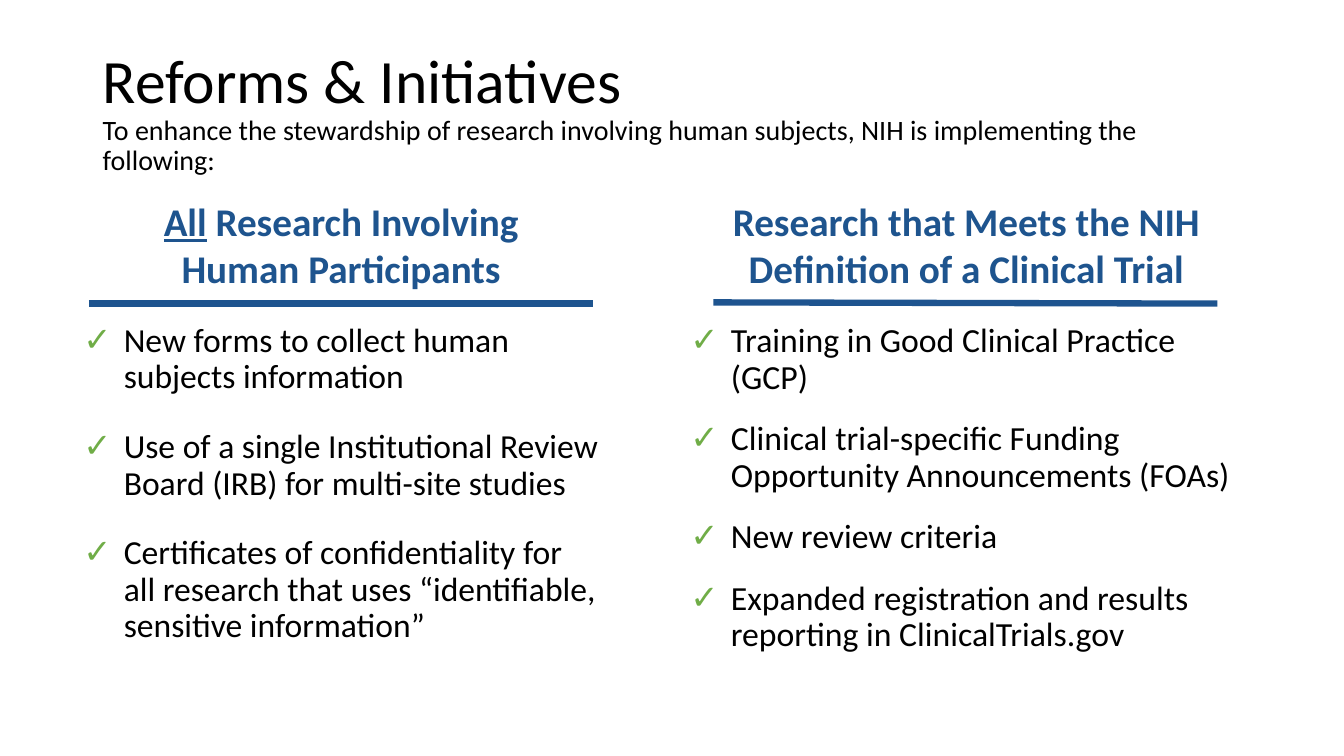
from pptx import Presentation
from pptx.dml.color import RGBColor
from pptx.enum.shapes import MSO_CONNECTOR as Connector
from pptx.enum.text import MSO_ANCHOR as Anchor, PP_ALIGN as Align
from pptx.oxml.ns import qn
from pptx.util import Cm, Pt
from lxml.etree import SubElement

COLORS = {"text": "000000", "heading": "1E548E", "rule": "1E548F", "check": "70AD47"}
FONT = "Calibri"


def format_run(run, size, color, bold=False):
    run.font.name = FONT
    run.font.size = Pt(size)
    run.font.bold = bold
    run.font.color.rgb = RGBColor.from_string(COLORS[color])


def add_text_frame(slide, left, top, width, height):
    shape = slide.shapes.add_textbox(Cm(left), Cm(top), Cm(width), Cm(height))
    shape.text_frame.word_wrap = True
    return shape.text_frame


def add_check_bullet(paragraph):
    properties = paragraph._p.get_or_add_pPr()
    properties.set("marL", str(Cm(1.02)))
    properties.set("indent", str(-Cm(1.02)))
    color = SubElement(properties, qn("a:buClr"))
    SubElement(color, qn("a:srgbClr"), val=COLORS["check"])
    SubElement(properties, qn("a:buFont"), typeface=FONT)
    SubElement(properties, qn("a:buChar"), char="✓")


def add_title(slide, box):
    text_frame = add_text_frame(slide, *box)
    text_frame.vertical_anchor = Anchor.MIDDLE
    paragraph = text_frame.paragraphs[0]
    paragraph.text = (
        "Reforms & Initiatives \v"
        "To enhance the stewardship of research involving human subjects, "
        "NIH is implementing the following:"
    )
    paragraph.line_spacing = 0.9
    for run, size in zip(paragraph.runs, (44, 20)):
        format_run(run, size, "text")


def add_heading(slide, box, parts):
    paragraph = add_text_frame(slide, *box).paragraphs[0]
    paragraph.alignment = Align.CENTER
    for words, underlined in parts:
        run = paragraph.add_run()
        run.text = words
        format_run(run, 28, "heading", bold=True)
        run.font.underline = underlined


def add_rule(slide, left, top, width, drop):
    rule = slide.shapes.add_connector(
        Connector.STRAIGHT, Cm(left), Cm(top), Cm(left + width), Cm(top + drop)
    )
    rule.line.color.rgb = RGBColor.from_string(COLORS["rule"])
    rule.line.width = Pt(4.5)
    SubElement(rule._element.spPr, qn("a:effectLst"))


def add_checklist(slide, box, items, size, before, after):
    text_frame = add_text_frame(slide, *box)
    text_frame.text = "\n".join(items)
    for index, paragraph in enumerate(text_frame.paragraphs):
        paragraph.line_spacing = 0.9
        paragraph.space_before = Pt(before if index else 0)
        paragraph.space_after = Pt(after)
        add_check_bullet(paragraph)
        format_run(paragraph.runs[0], size, "text")


def add_column(slide, box, heading, items, rule_inset, rule_drop, size, before, after):
    left, top, width, height = box
    add_heading(slide, (left + 0.94, top, width - 1.88, 2.64), heading)
    add_rule(slide, left + rule_inset, top + 2.8 - rule_drop, 12.7, rule_drop)
    add_checklist(
        slide, (left, top + 3.18, width, height - 3.18), items, size, before, after
    )


def main():
    presentation = Presentation()
    presentation.slide_width = Cm(33.87)
    presentation.slide_height = Cm(19.05)
    slide = presentation.slides.add_slide(presentation.slide_layouts[6])

    add_title(slide, (2.34, 1.02, 29.21, 3.68))
    add_column(
        slide,
        (1.85, 4.85, 13.49, 12.17),
        [("All", True), (" Research Involving Human Participants", False)],
        [
            "New forms to collect human subjects information",
            "Use of a single Institutional Review Board (IRB) for multi-site studies",
            "Certificates of confidentiality for all research that uses "
            "“identifiable, sensitive information”",
        ],
        rule_inset=0.39, rule_drop=0, size=24, before=24, after=0,
    )
    add_column(
        slide,
        (17.15, 4.85, 14.4, 12.17),
        [("Research that Meets the NIH Definition of a Clinical Trial", False)],
        [
            "Training in Good Clinical Practice (GCP)",
            "Clinical trial-specific Funding Opportunity Announcements (FOAs)",
            "New review criteria",
            "Expanded registration and results reporting in ClinicalTrials.gov",
        ],
        rule_inset=0.83, rule_drop=0.03, size=24.1, before=6, after=12,
    )
    presentation.save("out.pptx")


if __name__ == "__main__":
    main()
